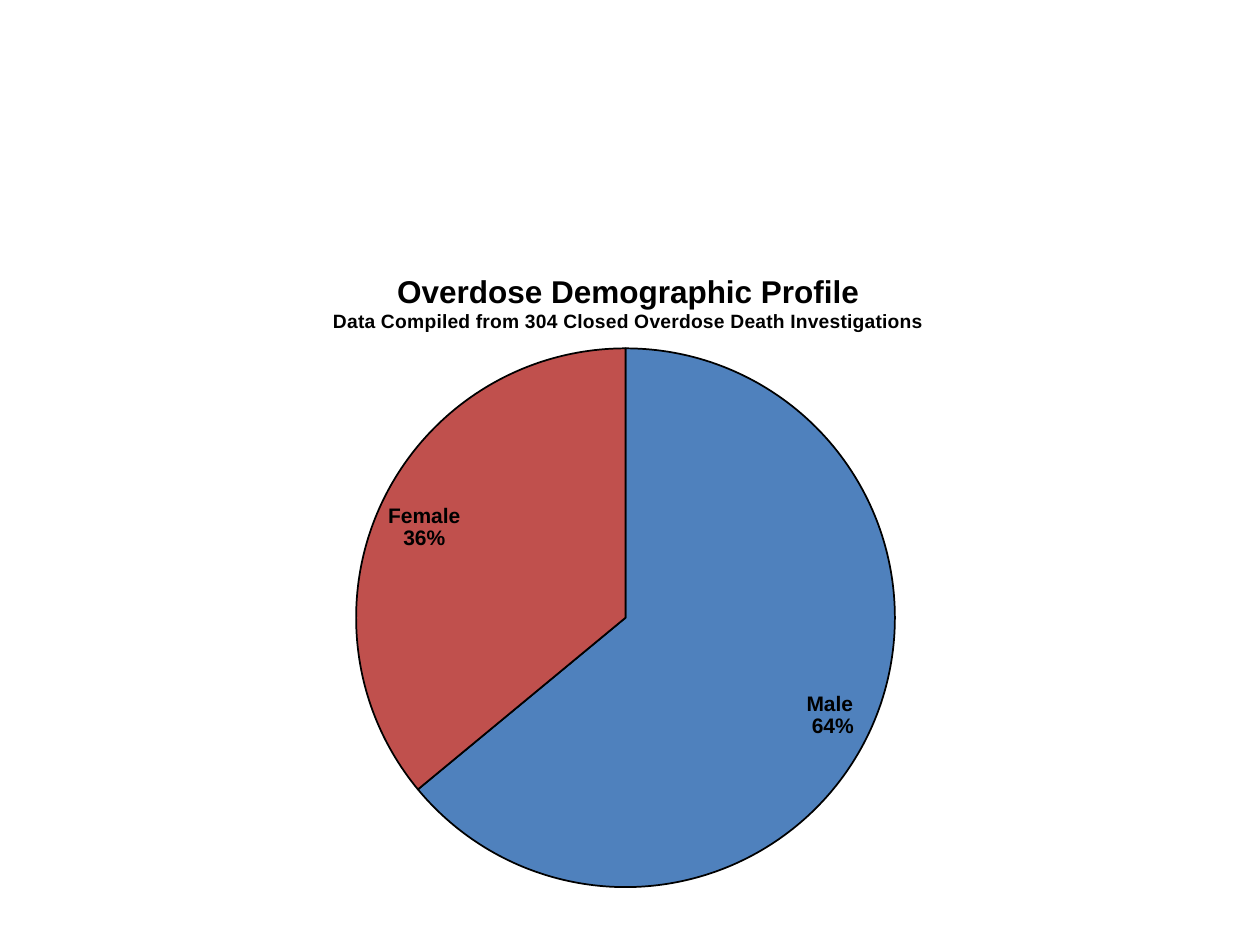
from dataclasses import dataclass

import pptx
import pptx.chart.chart
import pptx.chart.data
import pptx.dml.color
import pptx.enum.chart
import pptx.oxml
import pptx.oxml.ns
import pptx.util


@dataclass(frozen=True)
class Theme:
    font: str = "Arial"
    ink: str = "000000"
    base_size: int = 10
    label_size: int = 12
    heading_size: int = 18
    subheading_size: int = 11
    outline: float = 1


@dataclass(frozen=True)
class Slice:
    sex: str
    percent: int
    color: str


@dataclass(frozen=True)
class Heading:
    text: str
    size: int


THEME = Theme()
SLIDE_WIDTH, SLIDE_HEIGHT = 10, 7.5
SLICES = (Slice("Male ", 64, "4F81BD"), Slice("Female", 36, "C0504D"))
HEADINGS = (
    Heading("Overdose Demographic Profile", THEME.heading_size),
    Heading("Data Compiled from 304 Closed Overdose Death Investigations",
            THEME.subheading_size),
)


def rgb(value: str) -> pptx.dml.color.RGBColor:
    return pptx.dml.color.RGBColor.from_string(value)


def style_font(font, size: float, bold: bool) -> None:
    font.name = THEME.font
    font.size = pptx.util.Pt(size)
    font.bold = bold
    font.color.rgb = rgb(THEME.ink)


def manual_layout(target: str = "", **shares: float):
    """Return a layout whose lengths are shares of the chart's size."""
    inner = f'<c:layoutTarget val="{target}"/>' if target else ""
    inner += '<c:xMode val="edge"/><c:yMode val="edge"/>'
    inner += "".join(f'<c:{key} val="{share}"/>' for key, share in shares.items())
    return pptx.oxml.parse_xml(
        f'<c:layout {pptx.oxml.ns.nsdecls("c")}>'
        f"<c:manualLayout>{inner}</c:manualLayout></c:layout>")


def add_headings(chart: pptx.chart.chart.Chart) -> None:
    chart.has_title = True
    title = chart.chart_title
    title.include_in_layout = False
    frame = title.text_frame
    for index, heading in enumerate(HEADINGS):
        paragraph = frame.add_paragraph() if index else frame.paragraphs[0]
        run = paragraph.add_run()
        run.text = heading.text
        style_font(run.font, heading.size, True)
    element = chart._chartSpace.chart.find(pptx.oxml.ns.qn("c:title"))
    for layout in element.findall(pptx.oxml.ns.qn("c:layout")):
        element.remove(layout)
    element.find(pptx.oxml.ns.qn("c:tx")).addnext(manual_layout(x=0.25, y=0.04))


def style_slices(chart: pptx.chart.chart.Chart) -> None:
    series = chart.plots[0].series[0]
    for index, part in enumerate(SLICES):
        point = series.points[index].format
        point.fill.solid()
        point.fill.fore_color.rgb = rgb(part.color)
        point.line.color.rgb = rgb(THEME.ink)
        point.line.width = pptx.util.Pt(THEME.outline)


def add_labels(chart: pptx.chart.chart.Chart) -> None:
    labels = chart.plots[0].series[0].data_labels
    labels.show_value = False
    labels.show_category_name = True
    labels.show_percentage = True
    labels.show_legend_key = False
    labels.number_format = "0%"
    labels.number_format_is_linked = False
    labels.position = pptx.enum.chart.XL_LABEL_POSITION.BEST_FIT
    style_font(labels.font, THEME.label_size, True)
    # Category and share stand on separate lines
    separator = pptx.oxml.parse_xml(
        f'<c:separator {pptx.oxml.ns.nsdecls("c")}>\n</c:separator>')
    labels._element.find(pptx.oxml.ns.qn("c:showBubbleSize")).addnext(separator)


def add_profile(slide) -> None:
    data = pptx.chart.data.CategoryChartData()
    data.categories = [part.sex for part in SLICES]
    data.add_series("Series 1", [part.percent for part in SLICES])
    chart = slide.shapes.add_chart(
        pptx.enum.chart.XL_CHART_TYPE.PIE,
        pptx.util.Inches(0.026 * SLIDE_WIDTH),
        pptx.util.Inches(0.256 * SLIDE_HEIGHT),
        pptx.util.Inches(0.941 * SLIDE_WIDTH),
        pptx.util.Inches(0.704 * SLIDE_HEIGHT), data).chart
    style_font(chart.font, THEME.base_size, False)
    chart.has_legend = False
    chart.plots[0].vary_by_categories = True
    add_headings(chart)
    style_slices(chart)
    add_labels(chart)

    # Place the pie below the headings
    plot_area = chart._chartSpace.chart.plotArea
    for layout in plot_area.findall(pptx.oxml.ns.qn("c:layout")):
        plot_area.remove(layout)
    plot_area.insert(0, manual_layout("inner", x=0.27, y=0.16, w=0.46, h=0.81))


def main() -> None:
    deck = pptx.Presentation()
    deck.slide_width = pptx.util.Inches(SLIDE_WIDTH)
    deck.slide_height = pptx.util.Inches(SLIDE_HEIGHT)
    add_profile(deck.slides.add_slide(deck.slide_layouts[6]))
    deck.save("out.pptx")


if __name__ == "__main__":
    main()
